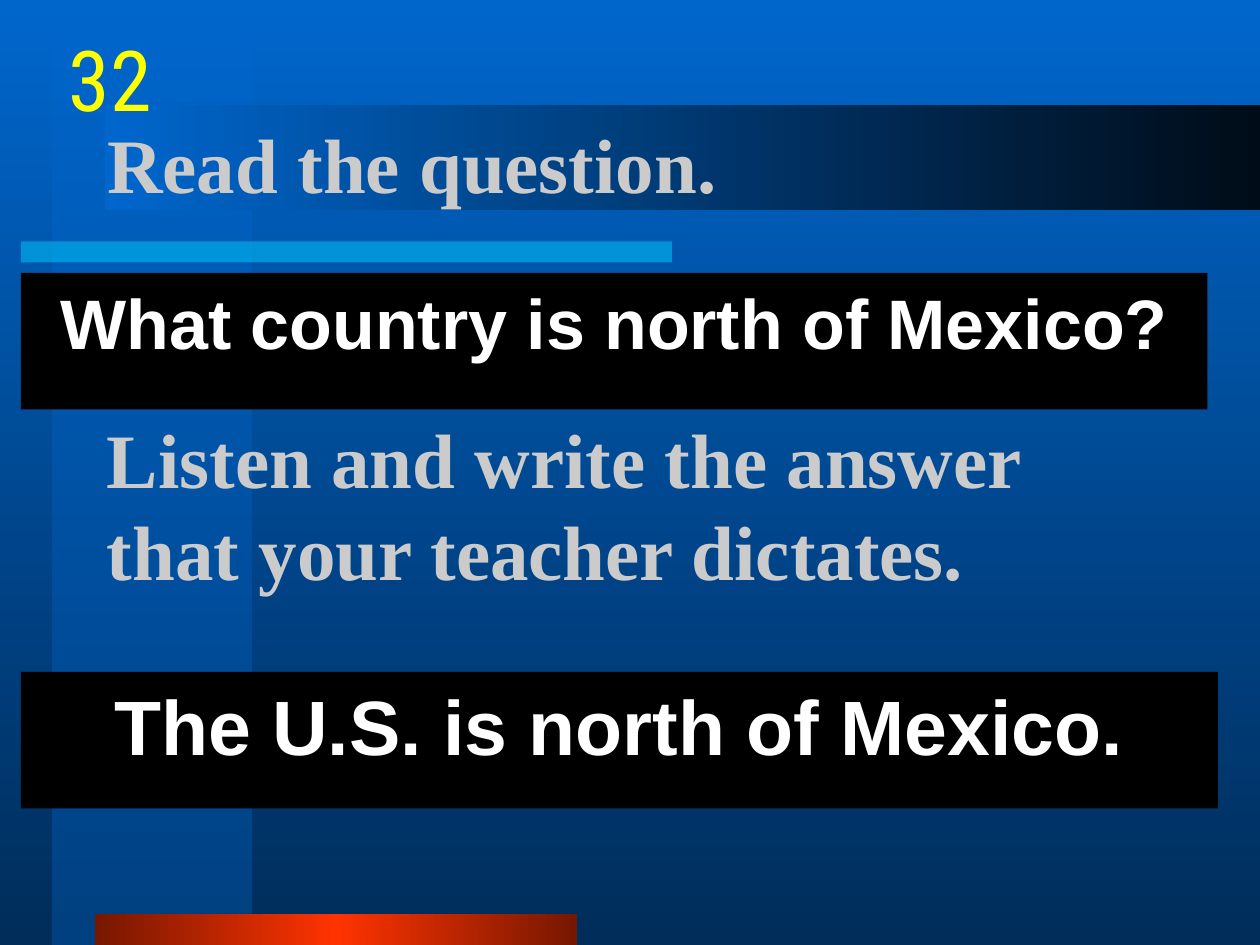
import pptx
import pptx.util
import pptx.dml.color
import pptx.enum.shapes
import pptx.enum.text
import pptx.oxml
import pptx.oxml.ns

Pt = pptx.util.Pt
ALIGN = pptx.enum.text.PP_ALIGN
ANCHOR = pptx.enum.text.MSO_ANCHOR

COLORS = {
    "sky": "0066CC", "deep": "002D5A", "column": "0053A6", "cyan": "00CCFF",
    "rust": "761700", "red": "FF3300", "night": "000C18", "black": "000000",
    "silver": "CBCBCB", "white": "FFFFFF", "yellow": "FFFF00",
}
BACKGROUND = (["sky", "deep"], 90)
BARS = [
    ((30, 0, 114, 540), ["sky", "column"], 90, 50),
    ((12, 138, 372, 12), ["cyan"], 0, 50),
    ((54, 522, 276, 18), ["rust", "red", "rust"], 0, 100),
    ((60, 60, 660, 60), ["sky", "night"], 0, 100),
]
HEADING = {"font": "Times New Roman", "size": 44, "color": "silver", "bold": True,
           "align": ALIGN.LEFT, "anchor": ANCHOR.MIDDLE, "before": 0, "wrap": True}
ANSWER = {"font": "Arial", "size": 44, "color": "white", "bold": True,
          "align": ALIGN.CENTER, "anchor": ANCHOR.TOP, "before": 4.5, "wrap": True}
NUMBER = {"font": "Roboto Condensed", "size": 48, "color": "yellow", "bold": False,
          "align": ALIGN.CENTER, "anchor": ANCHOR.TOP, "before": 0, "wrap": False}
TITLE = ("Read the question.", (54, 48, 612, 90))
TEXTS = [
    ("What country is north of Mexico?", (12, 156, 678, 78), {**ANSWER, "size": 40}, "black"),
    ("Listen and write the answer that your teacher dictates.", (54, 228, 612, 120), HEADING, None),
    ("The U.S. is north of Mexico.", (12, 384, 684, 78), ANSWER, "black"),
    ("32", (36, 12, 54, 60), NUMBER, None),
]


def rgb(name):
    return pptx.dml.color.RGBColor.from_string(COLORS[name])


def paint(fill, element, names, angle=0, opacity=100):
    if len(names) == 1:
        fill.solid()
        fill.fore_color.rgb = rgb(names[0])
    else:
        fill.gradient()
        gradient = element.xpath(".//a:gradFill")[0]
        for child in list(gradient):
            gradient.remove(child)
        stops = "".join(
            f'<a:gs pos="{100000 * i // (len(names) - 1)}"><a:srgbClr val="{COLORS[name]}"/></a:gs>'
            for i, name in enumerate(names))
        space = pptx.oxml.ns.nsdecls("a")
        gradient.append(pptx.oxml.parse_xml(f"<a:gsLst {space}>{stops}</a:gsLst>"))
        gradient.append(pptx.oxml.parse_xml(f'<a:lin {space} ang="{angle * 60000}" scaled="0"/>'))
    if opacity < 100:
        for color in element.xpath(".//a:srgbClr"):
            color.append(pptx.oxml.parse_xml(
                f'<a:alpha {pptx.oxml.ns.nsdecls("a")} val="{opacity * 1000}"/>'))


def add_bar(page, place, names, angle=0, opacity=100):
    bar = page.shapes.add_shape(pptx.enum.shapes.MSO_SHAPE.RECTANGLE, *map(Pt, place))
    bar.shadow.inherit = False
    bar.line.fill.background()
    paint(bar.fill, bar.element.spPr, names, angle, opacity)
    return bar


def write(box, text, style):
    frame = box.text_frame
    frame_format = {
        "word_wrap": style["wrap"], "vertical_anchor": style["anchor"],
        "auto_size": pptx.enum.text.MSO_AUTO_SIZE.NONE,
        "margin_left": Pt(7.2), "margin_right": Pt(7.2),
        "margin_top": Pt(3.6), "margin_bottom": Pt(3.6),
    }
    para = frame.paragraphs[0]
    span = para.add_run()
    span.text = text
    para_format = {"alignment": style["align"], "space_before": Pt(style["before"])}
    font_format = {"name": style["font"], "size": Pt(style["size"]), "bold": style["bold"]}
    for target, values in ((frame, frame_format), (para, para_format), (span.font, font_format)):
        for key, value in values.items():
            setattr(target, key, value)
    span.font.color.rgb = rgb(style["color"])


def main():
    deck = pptx.Presentation()
    deck.slide_width, deck.slide_height = Pt(720), Pt(540)
    page = deck.slides.add_slide(deck.slide_layouts[5])
    paint(page.background.fill, page.element, *BACKGROUND)
    for bar in BARS:
        add_bar(page, *bar)

    text, place = TITLE
    title = page.shapes.title
    for key, value in zip(("left", "top", "width", "height"), place):
        setattr(title, key, Pt(value))
    write(title, text, HEADING)
    page.shapes.element.append(title.element)

    for text, place, style, color in TEXTS:
        if color:
            box = add_bar(page, place, [color])
        else:
            box = page.shapes.add_textbox(*map(Pt, place))
        write(box, text, style)
    deck.save("out.pptx")


if __name__ == "__main__":
    main()
